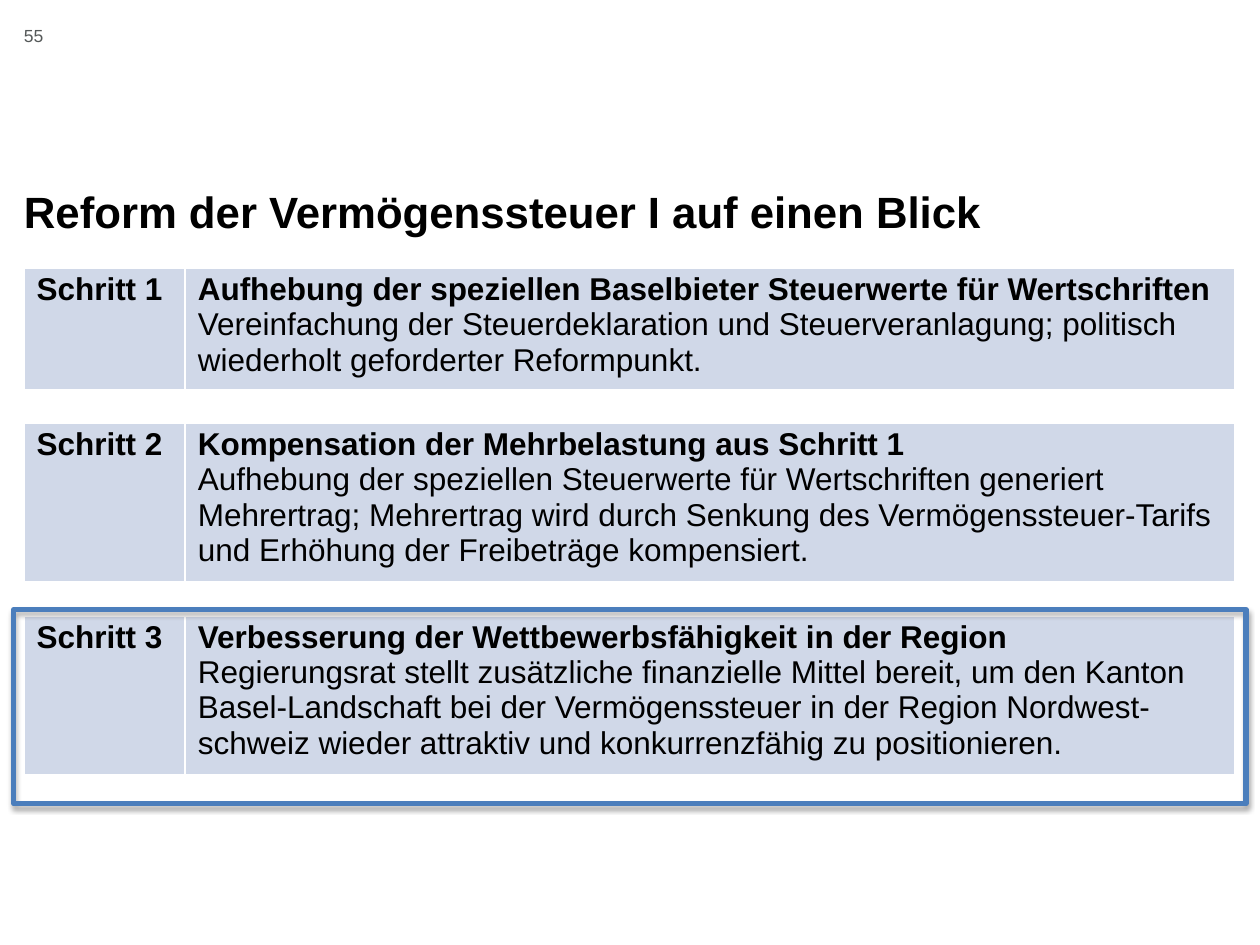
import pptx
import pptx.util
import pptx.dml.color
import pptx.enum.dml
import pptx.enum.shapes
import pptx.enum.text
import pptx.oxml
import pptx.oxml.ns
from dataclasses import dataclass
from lxml import etree

WIDE, HIGH = pptx.util.Inches(10), pptx.util.Inches(7.5)
LEFT, SPAN = 1.9, 96.1
NS = 'xmlns:a="http://schemas.openxmlformats.org/drawingml/2006/main"'


@dataclass(frozen=True)
class Theme:
    font: str = "Arial"
    ink: str = "000000"
    gray: str = "555959"
    band: str = "D0D8E8"
    rule: str = "FFFFFF"
    frame: str = "4B7EBC"
    head: int = 25
    text: int = 18
    note: int = 10


THEME = Theme()

STEPS = [
    ("Schritt 1", "Aufhebung der speziellen Baselbieter Steuerwerte für Wertschriften",
     "Vereinfachung der Steuerdeklaration und Steuerveranlagung; politisch "
     "wiederholt geforderter Reformpunkt.", 12.27),
    ("Schritt 2", "Kompensation der Mehrbelastung aus Schritt 1",
     "Aufhebung der speziellen Steuerwerte für Wertschriften generiert Mehrertrag; "
     "Mehrertrag wird durch Senkung des Vermögenssteuer-Tarifs und Erhöhung der "
     "Freibeträge kompensiert.", 16.1),
    ("Schritt 3", "Verbesserung der Wettbewerbsfähigkeit in der Region",
     "Regierungsrat stellt zusätzliche finanzielle Mittel bereit, um den Kanton "
     "Basel-Landschaft bei der Vermögenssteuer in der Region Nordwest-schweiz "
     "wieder attraktiv und konkurrenzfähig zu positionieren.", 16.1),
]
GAP = 3.6


def across(share):
    return int(WIDE * share / 100)


def down(share):
    return int(HIGH * share / 100)


def place(x, y, w, h):
    return across(x), down(y), across(w), down(h)


def color(code):
    return pptx.dml.color.RGBColor.from_string(code)


def style(para, size, code, bold=False):
    para.font.name = THEME.font
    para.font.size = pptx.util.Pt(size)
    para.font.bold = bold
    para.font.color.rgb = color(code)


def trim(frame):
    frame.margin_left = frame.margin_right = 0
    frame.margin_top = frame.margin_bottom = 0
    frame.word_wrap = True


def add_note(slide, text, box):
    frame = slide.shapes.add_textbox(*box).text_frame
    trim(frame)
    frame.text = text
    style(frame.paragraphs[0], THEME.note, THEME.gray)


def set_title(slide, text, box):
    title = slide.shapes.title
    title.left, title.top, title.width, title.height = box
    frame = title.text_frame
    trim(frame)
    frame.auto_size = pptx.enum.text.MSO_AUTO_SIZE.NONE
    frame.vertical_anchor = pptx.enum.text.MSO_ANCHOR.BOTTOM
    frame.text = text
    para = frame.paragraphs[0]
    para.alignment = pptx.enum.text.PP_ALIGN.LEFT
    para.line_spacing = 0.7
    style(para, THEME.head, THEME.ink, True)


def set_rules(cell):
    props = cell._tc.get_or_add_tcPr()
    for side in ("L", "R", "T", "B"):
        props.append(pptx.oxml.parse_xml(
            f'<a:ln{side} {NS} w="12700"><a:solidFill>'
            f'<a:srgbClr val="{THEME.rule}"/></a:solidFill></a:ln{side}>'))


def fill_cell(cell, lines):
    set_rules(cell)
    cell.margin_top = cell.margin_bottom = pptx.util.Inches(0.03)
    cell.fill.solid()
    cell.fill.fore_color.rgb = color(THEME.band)
    cell.text = "\n".join(lines)
    for spot, para in enumerate(cell.text_frame.paragraphs):
        style(para, THEME.text, THEME.ink, spot == 0)


def clear_cell(cell):
    set_rules(cell)
    cell.margin_top = cell.margin_bottom = 0
    cell.fill.background()
    para = cell.text_frame.paragraphs[0]
    etree.SubElement(para._p, pptx.oxml.ns.qn("a:endParaRPr"),
                     sz=str(THEME.note * 100))


def add_steps(slide, x, y, cols):
    count = 2 * len(STEPS) - 1
    tall = sum(step[-1] for step in STEPS) + GAP * (len(STEPS) - 1)
    table = slide.shapes.add_table(count, len(cols),
                                   *place(x, y, sum(cols), tall)).table
    table.first_row = table.horz_banding = False
    for col, width in zip(table.columns, cols):
        col.width = across(width)
    for spot, row in enumerate(table.rows):
        if spot % 2:
            row.height = down(GAP)
            for cell in row.cells:
                clear_cell(cell)
        else:
            label, head, text, height = STEPS[spot // 2]
            row.height = down(height)
            fill_cell(row.cells[0], [label])
            fill_cell(row.cells[1], [head, text])


def add_frame(slide, box):
    rect = slide.shapes.add_shape(pptx.enum.shapes.MSO_SHAPE.RECTANGLE, *box)
    rect.fill.background()
    rect.line.color.rgb = color(THEME.frame)
    rect.line.width = pptx.util.Pt(3)
    blur, drop = pptx.util.Pt(3.1), pptx.util.Pt(1.8)
    rect._element.spPr.append(pptx.oxml.parse_xml(
        f'<a:effectLst {NS}><a:outerShdw blurRad="{blur}" dist="{drop}" '
        f'dir="5400000" rotWithShape="0"><a:srgbClr val="{THEME.ink}">'
        '<a:alpha val="35000"/></a:srgbClr></a:outerShdw></a:effectLst>'))


def main():
    deck = pptx.Presentation()
    deck.slide_width, deck.slide_height = WIDE, HIGH
    slide = deck.slides.add_slide(deck.slide_layouts[5])
    add_note(slide, "55", place(LEFT, 2.67, 4.4, 5.33))
    set_title(slide, "Reform der Vermögenssteuer I auf einen Blick",
              place(LEFT, 14.13, SPAN, 10.8))
    add_steps(slide, LEFT, 28.4, (12.8, SPAN - 12.8))
    add_frame(slide, place(1.1, 64.53, 97.8, 20.53))
    deck.save("out.pptx")


if __name__ == "__main__":
    main()
